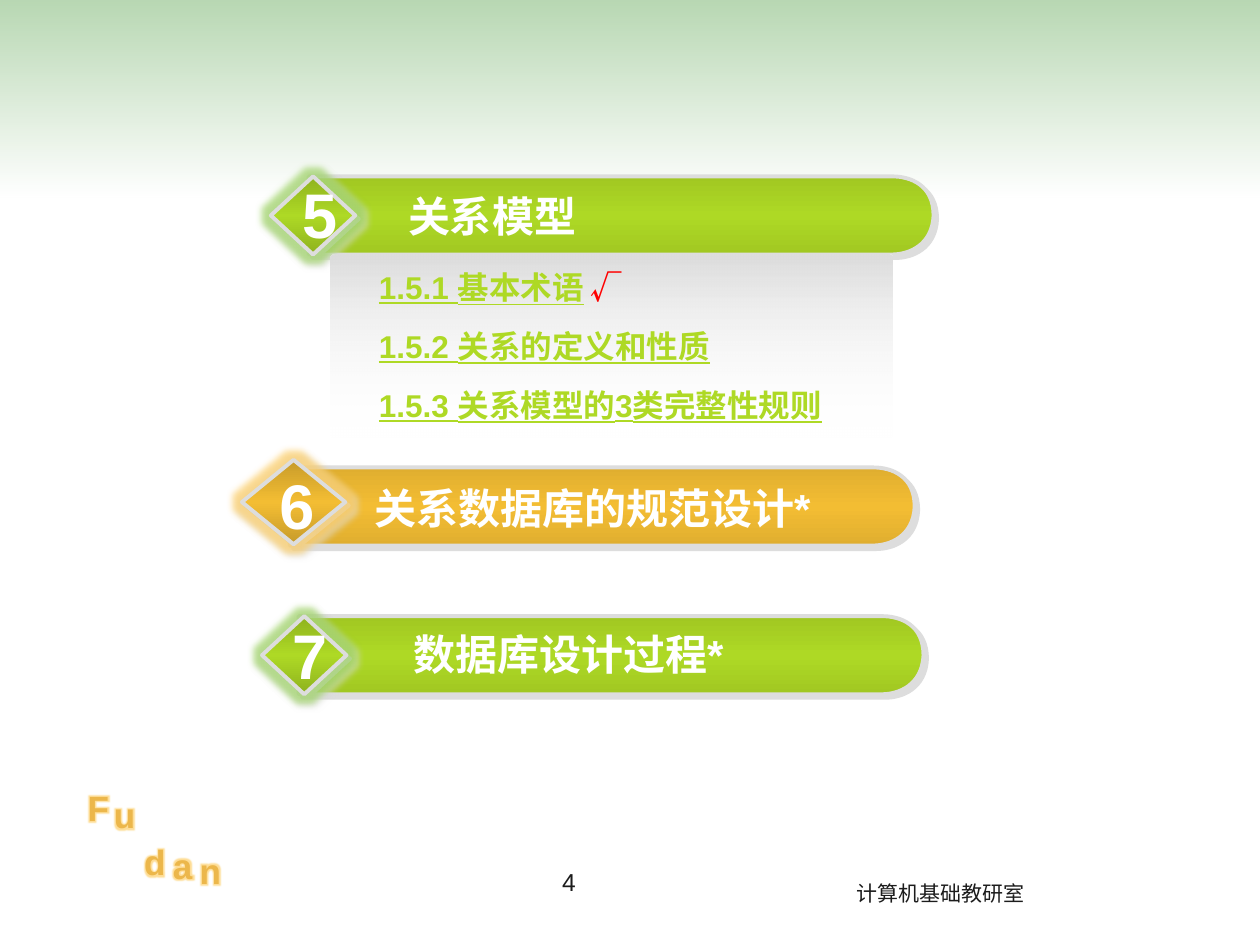
import pptx
import pptx.util
import pptx.dml.color
import pptx.enum.shapes
import pptx.enum.text
import pptx.oxml
import pptx.oxml.ns
from lxml import etree

Inches = pptx.util.Inches
Pt = pptx.util.Pt
RGBColor = pptx.dml.color.RGBColor
Kind = pptx.enum.shapes.MSO_SHAPE
Align = pptx.enum.text.PP_ALIGN
Anchor = pptx.enum.text.MSO_ANCHOR
qn = pptx.oxml.ns.qn

WHITE = RGBColor(0xFF, 0xFF, 0xFF)
INK = RGBColor(0x1C, 0x1C, 0x1C)
SILVER = RGBColor(0xDD, 0xDD, 0xDD)
RED = RGBColor(0xFF, 0x00, 0x00)
FOREST = RGBColor(0x4E, 0x9D, 0x41)
LIME = RGBColor(0xAE, 0xD9, 0x25)
LIME_SHADE = RGBColor(0xA1, 0xC8, 0x22)
LIME_DARK = RGBColor(0x8E, 0xB2, 0x1E)
LIME_GLOW = RGBColor(0x92, 0xD0, 0x50)
AMBER = RGBColor(0xF3, 0xBD, 0x33)
AMBER_SHADE = RGBColor(0xE0, 0xAE, 0x2F)
AMBER_DARK = RGBColor(0xC7, 0x9B, 0x2A)
AMBER_GLOW = RGBColor(0xFF, 0xC8, 0x50)
GOLD = RGBColor(0xEC, 0xB7, 0x4B)

LIME_SET = (LIME, LIME_SHADE, LIME_DARK, LIME_GLOW)
AMBER_SET = (AMBER, AMBER_SHADE, AMBER_DARK, AMBER_GLOW)


def curve(start, first, second, end, steps=16):
    """Points along a cubic curve, without its start."""
    points = []
    for step in range(1, steps + 1):
        t = step / steps
        weights = ((1 - t) ** 3, 3 * t * (1 - t) ** 2, 3 * t * t * (1 - t), t ** 3)
        points.append(tuple(
            sum(weight * point[axis] for weight, point in zip(weights, (start, first, second, end)))
            for axis in (0, 1)))
    return points


class SlideBuilder:
    latin_font = "Arial"
    cjk_font = "Noto Sans CJK JP"

    def __init__(self, slide):
        self.slide = slide

    def color_element(self, parent, color, opacity=100):
        element = etree.SubElement(parent, qn("a:srgbClr"), val=str(color))
        if opacity < 100:
            etree.SubElement(element, qn("a:alpha"), val=str(opacity * 1000))

    def gradient(self, shape, stops):
        """Fill from top to bottom; each stop is position, colour, opacity."""
        shape.fill.gradient()
        shape.fill.gradient_angle = 270
        stop_list = shape._element.spPr.find(".//" + qn("a:gsLst"))
        for old_stop in list(stop_list):
            stop_list.remove(old_stop)
        for position, color, opacity in stops:
            stop = etree.SubElement(stop_list, qn("a:gs"), pos=str(position * 1000))
            self.color_element(stop, color, opacity)

    def effects(self, parent, glow=None, radius=8, shadow=None, distance=2.8):
        effect_list = etree.Element(qn("a:effectLst"))
        if glow is not None:
            element = etree.SubElement(effect_list, qn("a:glow"), rad=str(Pt(radius)))
            self.color_element(element, glow, 60)
        if shadow is not None:
            element = etree.SubElement(effect_list, qn("a:outerShdw"), blurRad="0",
                                       dist=str(Pt(distance)), dir="2700000", algn="ctr")
            self.color_element(element, shadow)
        for old_list in parent.findall(qn("a:effectLst")):
            parent.remove(old_list)
        before = [parent.find(qn(tag)) for tag in ("a:ln", "a:solidFill", "a:gradFill")]
        next(item for item in before if item is not None).addnext(effect_list)

    def shape(self, kind, box, stops):
        shape = self.slide.shapes.add_shape(kind, *map(Inches, box))
        shape.shadow.inherit = False
        shape.line.fill.background()
        self.gradient(shape, stops)
        return shape

    def outlined(self, shape, edge, middle, glow=None):
        self.gradient(shape, [(0, edge, 100), (50, middle, 100), (100, edge, 100)])
        shape.line.color.rgb = SILVER
        shape.line.width = Pt(2.25)
        self.effects(shape._element.spPr, glow=glow, shadow=SILVER)

    def bar(self, left, top, palette):
        middle, shade = palette[:2]
        tip = (4.96, 0.31)
        points = [(0, 0.62), (4.63, 0.62)]
        points += curve(points[-1], (4.76, 0.62), (4.95, 0.55), tip)
        points += curve(tip, (4.96, 0.07), (4.78, 0), (4.63, 0))
        builder = self.slide.shapes.build_freeform(Inches(left), Inches(top))
        builder.add_line_segments([(Inches(left + x), Inches(top + y)) for x, y in points])
        self.outlined(builder.convert_to_shape(), shade, middle)

    def diamond(self, box, palette):
        middle, _, dark, glow = palette
        shape = self.slide.shapes.add_shape(Kind.DIAMOND, *map(Inches, box))
        self.outlined(shape, dark, middle, glow)

    def run(self, paragraph, text, size, color, bold=False, underline=False, font=None):
        run = paragraph.add_run()
        run.text = text
        run.font.size = Pt(size)
        run.font.bold = bold
        if underline:
            run.font.underline = True
        run.font.color.rgb = color
        run.font.name = font or self.latin_font
        return run

    def text(self, box, text, size, color, bold=False, align=Align.CENTER, font=None,
             glow=None, shadow=None):
        text_box = self.slide.shapes.add_textbox(*map(Inches, box))
        text_box.text_frame.word_wrap = True
        paragraph = text_box.text_frame.paragraphs[0]
        paragraph.alignment = align
        run = self.run(paragraph, text, size, color, bold, font=font)
        if glow is not None or shadow is not None:
            self.effects(run.font._element, glow=glow, radius=5, shadow=shadow, distance=2)

    def topics(self, box, lines):
        panel = self.shape(Kind.ROUNDED_RECTANGLE, box, [(0, SILVER, 100), (100, WHITE, 0)])
        panel.adjustments[0] = 0.02
        frame = panel.text_frame
        frame.word_wrap = True
        frame.vertical_anchor = Anchor.MIDDLE
        for index, (title, mark) in enumerate(lines):
            paragraph = frame.add_paragraph() if index else frame.paragraphs[0]
            paragraph.alignment = Align.LEFT
            paragraph.space_before = Pt(6 if index else 0)
            paragraph.space_after = Pt(6)
            properties = paragraph._p.get_or_add_pPr()
            properties.set("marL", "0")
            properties.set("indent", str(Inches(0.28)))
            self.run(paragraph, title, 18, LIME, True, True)
            if mark:
                self.run(paragraph, " ", 18, INK, True)
                self.run(paragraph, mark, 18, RED, True)


def main():
    presentation = pptx.Presentation()
    presentation.slide_width = Inches(10)
    presentation.slide_height = Inches(7.5)
    builder = SlideBuilder(presentation.slides.add_slide(presentation.slide_layouts[6]))

    # Header band
    builder.shape(Kind.RECTANGLE, (0, 0, 10, 1.57), [(0, FOREST, 40), (100, WHITE, 40)])

    # Footer, scattered letters and slide number
    builder.text((6.7, 6.94, 1.71, 0.3), "计算机基础教研室", 12, INK,
                 align=Align.LEFT, font=builder.cjk_font)
    letters = [("F", 0.31, 6.19), ("d", 0.76, 6.62), ("u", 0.52, 6.25),
               ("a", 0.98, 6.65), ("n", 1.2, 6.69)]
    for letter, left, top in letters:
        builder.text((left, top, 0.94, 0.44), letter, 20, GOLD, True, glow=AMBER_GLOW)
    builder.text((5.68 - 2.33, 6.83, 2.33, 0.52), "4", 14, INK)

    # Chapter bars: number, title, palette, bar corner, diamond, title box, number corner
    chapters = [
        ("7", "数据库设计过程*", LIME_SET, (2.37, 4.89), (2.08, 4.89, 0.67, 0.62),
         (2.82, 4.94, 3.38, 0.5), (2.22, 4.84)),
        ("6", "关系数据库的规范设计*", AMBER_SET, (2.3, 3.71), (1.92, 3.65, 0.82, 0.67),
         (2.74, 3.78, 3.92, 0.5), (2.12, 3.65)),
        ("5", "关系模型", LIME_SET, (2.45, 1.4), (2.15, 1.4, 0.67, 0.62),
         (2.89, 1.46, 2.03, 0.5), (2.3, 1.34)),
    ]
    for number, title, palette, corner, diamond, title_box, number_corner in chapters:
        builder.bar(*corner, palette)
        builder.diamond(diamond, palette)
        builder.text(title_box, title, 24, WHITE, True, shadow=INK)
        builder.text((*number_corner, 0.33, 0.7), number, 36, WHITE, True, shadow=INK)

    # Topics of the current chapter
    builder.topics((2.62, 2.02, 4.46, 1.45), [
        ("1.5.1 基本术语", "√"),
        ("1.5.2 关系的定义和性质", None),
        ("1.5.3 关系模型的3类完整性规则", None),
    ])

    presentation.save("out.pptx")


if __name__ == "__main__":
    main()
